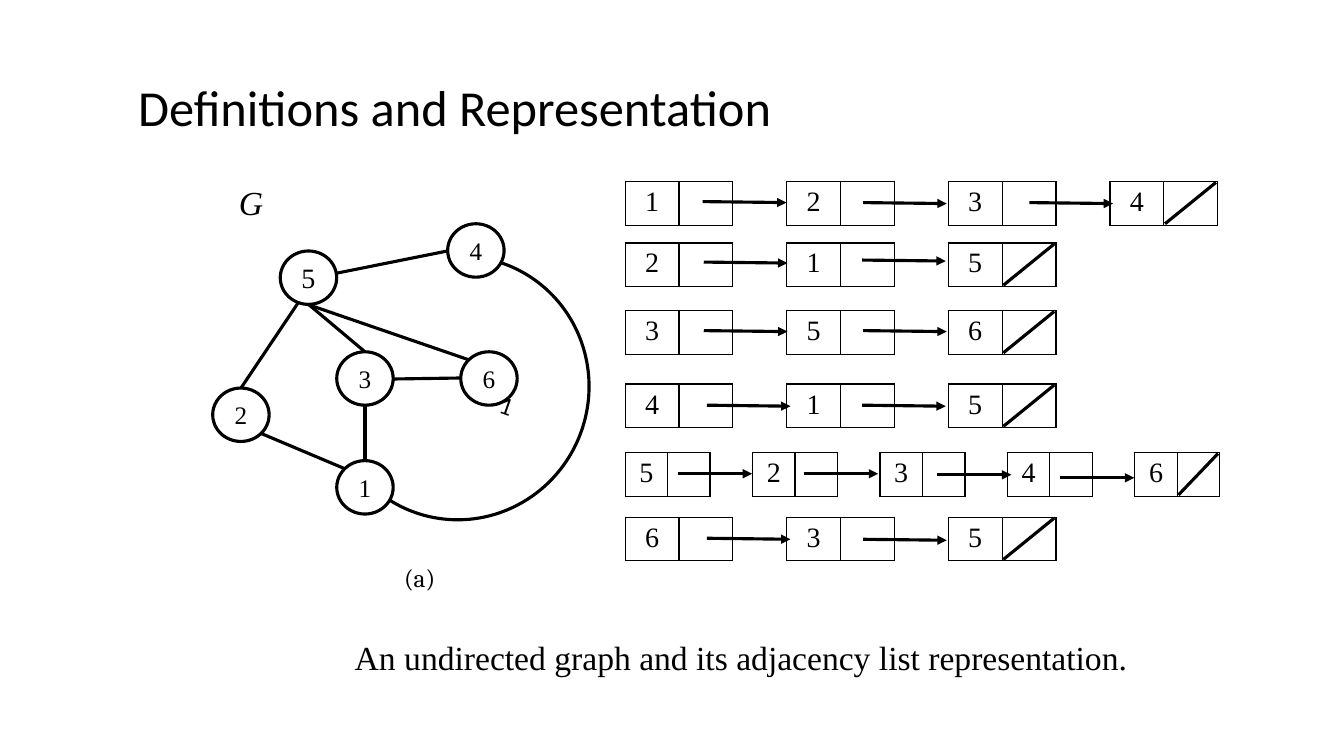
from lxml import etree
from pptx import Presentation
from pptx.dml.color import RGBColor
from pptx.enum.shapes import MSO_CONNECTOR, MSO_SHAPE
from pptx.enum.text import MSO_ANCHOR, MSO_AUTO_SIZE, PP_ALIGN
from pptx.oxml.ns import qn
from pptx.util import Inches, Pt

BLACK, WHITE = "000000", "FFFFFF"
SERIF = "Times New Roman"
TITLE = "Definitions and Representation"

LABELS = [
    ("G", (2.27, 1.76, 0.45, 0.5), 24, SERIF, True),
    ("(a)", (3.91, 5.53, 0.51, 0.4), 18, "Cambria", False),
    ("An undirected graph and its adjacency list representation.",
     (3.42, 6.27, 8.07, 0.5), 24, SERIF, False),
]

NODE_W, NODE_H = 0.56, 0.53
NODES = [
    ("5", 2.78, 2.49, 20),
    ("4", 4.44, 2.22, 18),
    ("3", 3.34, 3.49, 18),
    ("6", 4.57, 3.49, 18),
    ("2", 2.11, 3.85, 18),
    ("1", 3.34, 4.57, 18),
]
EDGES = [
    ((3.06, 3.02), (3.62, 3.49)),
    ((3.05, 3.02), (4.65, 3.57)),
    ((3.9, 3.76), (4.57, 3.75)),
    ((3.62, 4.02), (3.62, 4.57)),
    ((2.59, 4.3), (3.42, 4.65)),
    ((2.96, 3), (2.39, 3.85)),
    ((3.34, 2.71), (4.44, 2.49)),
]

LIST_X, ROW_H = 6.2, 0.43
WIDE = {"columns": 11, "width": 5.88, "arrow": 0.83, "drop": 0.01}
NARROW = {"columns": 14, "width": 5.9, "arrow": 0.74, "drop": 0}
ADJACENCY = [
    ("1234", 1.8, WIDE, [(6.97, 2), (8.56, 2.01), (10.21, 2.01)]),
    ("215", 2.41, WIDE, [(6.98, 2.6), (8.55, 2.58)]),
    ("356", 3.08, WIDE, [(6.98, 3.28), (8.56, 3.28)]),
    ("415", 3.81, WIDE, [(7.01, 4.02), (8.55, 4.02)]),
    ("52346", 4.49, NARROW,
     [(6.72, 4.7), (7.97, 4.7), (9.29, 4.71), (10.51, 4.74)]),
    ("635", 5.13, WIDE, [(7.01, 5.34), (8.56, 5.35)]),
]


def rgb(color):
    return RGBColor.from_string(color)


def write(tf, text, size, font=SERIF, italic=False, align=None):
    p = tf.paragraphs[0]
    p.alignment = align
    r = p.add_run()
    r.text = text
    r.font.size = Pt(size)
    r.font.name = font
    r.font.italic = italic
    r.font.color.rgb = rgb(BLACK)


def outlined(s, kind, x, y, w, h):
    sp = s.shapes.add_shape(kind, Inches(x), Inches(y), Inches(w), Inches(h))
    sp.shadow.inherit = False
    sp.line.color.rgb = rgb(BLACK)
    sp.line.width = Pt(2.25)
    sp.text_frame.vertical_anchor = MSO_ANCHOR.MIDDLE
    return sp


def line(s, start, end, arrow=False):
    cn = s.shapes.add_connector(
        MSO_CONNECTOR.STRAIGHT, *(Inches(v) for v in (*start, *end)))
    cn.line.color.rgb = rgb(BLACK)
    cn.line.width = Pt(2.25)
    if arrow:
        etree.SubElement(cn.line._get_or_add_ln(), qn("a:tailEnd"), type="triangle")
    etree.SubElement(cn._element.spPr, qn("a:effectLst"))


def border(cell, side, color, width):
    ln = etree.SubElement(cell._tc.get_or_add_tcPr(), qn("a:ln" + side),
                          w=str(Pt(width)))
    fill = etree.SubElement(ln, qn("a:solidFill"))
    etree.SubElement(fill, qn("a:srgbClr"), val=color)


def adjacency_row(s, vertices, top, style):
    count = style["columns"]
    table = s.shapes.add_table(
        1, count, Inches(LIST_X), Inches(top),
        Inches(style["width"]), Inches(ROW_H)).table
    table.first_row = table.horz_banding = False
    used = [i % 3 < 2 and i // 3 < len(vertices) for i in range(count)]
    for i, column in enumerate(table.columns):
        column.width = Inches(style["width"] / count)
        cell = table.cell(0, i)
        left = used[i] or (i > 0 and used[i - 1])
        right = used[i] or (i + 1 < count and used[i + 1])
        border(cell, "L", BLACK if left else WHITE, 1)
        border(cell, "R", BLACK if right else WHITE, 1)
        border(cell, "T", BLACK if used[i] else WHITE, 1)
        border(cell, "B", BLACK if used[i] else WHITE, 1 if used[i] else 3)
        cell.fill.solid()
        cell.fill.fore_color.rgb = rgb(WHITE)
        if used[i] and i % 3 == 0:
            write(cell.text_frame, vertices[i // 3], 20, align=PP_ALIGN.CENTER)


def adjacency_links(s, vertices, top, style, arrows):
    for x, y in arrows:
        line(s, (x, y), (x + style["arrow"], y + style["drop"]), True)
    col = style["width"] / style["columns"]
    right = LIST_X + col * (3 * len(vertices) - 1)
    line(s, (right - 0.02, top + 0.01), (right - col + 0.01, top + 0.42))


def main():
    prs = Presentation()
    prs.slide_width, prs.slide_height = Inches(13.33), Inches(7.5)
    s = prs.slides.add_slide(prs.slide_layouts[5])

    title = s.shapes.title
    title.left, title.top = Inches(1.27), Inches(0.7)
    title.width, title.height = Inches(6.7), Inches(0.71)
    title.text_frame.vertical_anchor = MSO_ANCHOR.TOP
    write(title.text_frame, TITLE, 36, "Calibri", align=PP_ALIGN.LEFT)

    for name, x, y, size in NODES:
        sp = outlined(s, MSO_SHAPE.OVAL, x, y, NODE_W, NODE_H)
        sp.fill.solid()
        sp.fill.fore_color.rgb = rgb(WHITE)
        write(sp.text_frame, name, size, align=PP_ALIGN.CENTER)
    for start, end in EDGES:
        line(s, start, end)

    arc = outlined(s, MSO_SHAPE.ARC, 3.27, 2.54, 2.57, 2.62)
    arc.fill.background()
    arc.rotation = 19.3
    arc.adjustments[0], arc.adjustments[1] = 161.25, 61.42
    write(arc.text_frame, "1", 18, "Calibri", align=PP_ALIGN.CENTER)

    for text, box, size, font, italic in LABELS:
        tf = s.shapes.add_textbox(*(Inches(v) for v in box)).text_frame
        tf.word_wrap = False
        tf.auto_size = MSO_AUTO_SIZE.SHAPE_TO_FIT_TEXT
        write(tf, text, size, font, italic)

    for vertices, top, style, arrows in ADJACENCY:
        adjacency_row(s, vertices, top, style)
        adjacency_links(s, vertices, top, style, arrows)

    prs.save("out.pptx")


if __name__ == "__main__":
    main()
